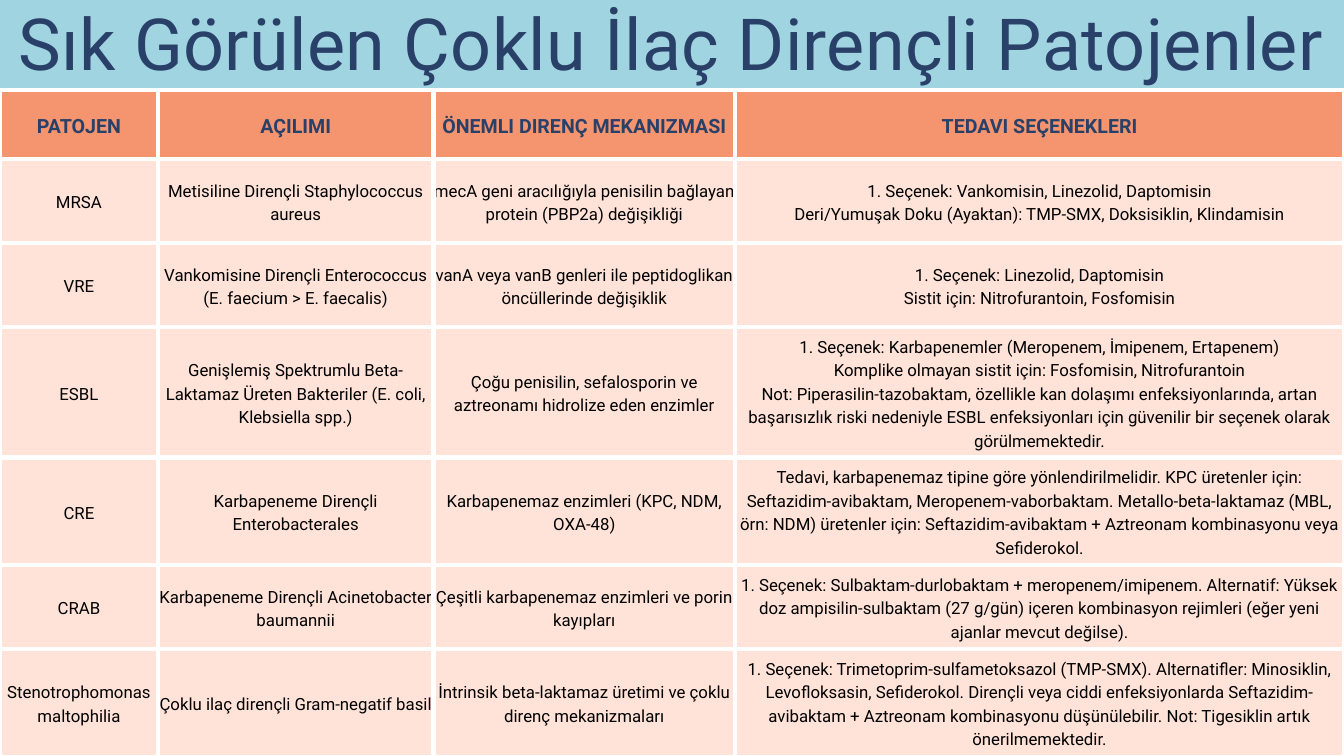
from typing import NamedTuple

from lxml.etree import SubElement
from pptx import Presentation
from pptx.dml.color import RGBColor
from pptx.enum.shapes import MSO_SHAPE
from pptx.enum.text import MSO_ANCHOR, MSO_AUTO_SIZE, PP_ALIGN
from pptx.oxml.ns import qn
from pptx.util import Inches, Pt

COLORS = {
    "page": "E7F1F4",
    "band": "A1D4E1",
    "navy": "294069",
    "header": "F4956F",
    "body": "FFE3D8",
    "black": "000000",
    "border": "FFFFFF",
}
FONT = "Roboto"
BORDER_WIDTH = Pt(5.25)
COLUMN_WIDTHS = [2.35, 4.1, 4.49, 9.06]
ROW_HEIGHTS = [1.03, 1.25, 1.25, 1.94, 1.6, 1.25, 1.6]


class TextStyle(NamedTuple):
    size: float
    spacing: float
    color: str
    bold: bool = False


class Pathogen(NamedTuple):
    name: str
    meaning: str
    mechanism: str
    treatment: str


TITLE_STYLE = TextStyle(77, 84.7, "navy")
HEADER_STYLE = TextStyle(21, 29.4, "navy", True)
BODY_STYLE = TextStyle(18, 25.2, "black")

HEADER = Pathogen("PATOJEN", "AÇILIMI", "ÖNEMLI DIRENÇ MEKANIZMASI", "TEDAVI SEÇENEKLERI")
PATHOGENS = [
    Pathogen(
        "MRSA",
        "Metisiline Dirençli Staphylococcus aureus",
        "mecA geni aracılığıyla penisilin bağlayan protein (PBP2a) değişikliği",
        "1. Seçenek: Vankomisin, Linezolid, Daptomisin\n"
        "Deri/Yumuşak Doku (Ayaktan): TMP-SMX, Doksisiklin, Klindamisin",
    ),
    Pathogen(
        "VRE",
        "Vankomisine Dirençli Enterococcus (E. faecium > E. faecalis)",
        "vanA veya vanB genleri ile peptidoglikan öncüllerinde değişiklik",
        "1. Seçenek: Linezolid, Daptomisin\n"
        "Sistit için: Nitrofurantoin, Fosfomisin",
    ),
    Pathogen(
        "ESBL",
        "Genişlemiş Spektrumlu Beta-Laktamaz Üreten Bakteriler (E. coli, Klebsiella spp.)",
        "Çoğu penisilin, sefalosporin ve aztreonamı hidrolize eden enzimler",
        "1. Seçenek: Karbapenemler (Meropenem, İmipenem, Ertapenem)\n"
        "Komplike olmayan sistit için: Fosfomisin, Nitrofurantoin\n"
        "Not: Piperasilin-tazobaktam, özellikle kan dolaşımı enfeksiyonlarında, artan "
        "başarısızlık riski nedeniyle ESBL enfeksiyonları için güvenilir bir seçenek "
        "olarak görülmemektedir.",
    ),
    Pathogen(
        "CRE",
        "Karbapeneme Dirençli Enterobacterales",
        "Karbapenemaz enzimleri (KPC, NDM, OXA-48)",
        "Tedavi, karbapenemaz tipine göre yönlendirilmelidir. KPC üretenler için: "
        "Seftazidim-avibaktam, Meropenem-vaborbaktam. Metallo-beta-laktamaz (MBL, örn: "
        "NDM) üretenler için: Seftazidim-avibaktam + Aztreonam kombinasyonu veya "
        "Sefiderokol.",
    ),
    Pathogen(
        "CRAB",
        "Karbapeneme Dirençli Acinetobacter baumannii",
        "Çeşitli karbapenemaz enzimleri ve porin kayıpları",
        "1. Seçenek: Sulbaktam-durlobaktam + meropenem/imipenem. Alternatif: Yüksek doz "
        "ampisilin-sulbaktam (27 g/gün) içeren kombinasyon rejimleri (eğer yeni ajanlar "
        "mevcut değilse).",
    ),
    Pathogen(
        "Stenotrophomonas maltophilia",
        "Çoklu ilaç dirençli Gram-negatif basil",
        "İntrinsik beta-laktamaz üretimi ve çoklu direnç mekanizmaları",
        "1. Seçenek: Trimetoprim-sulfametoksazol (TMP-SMX). Alternatifler: Minosiklin, "
        "Levofloksasin, Sefiderokol. Dirençli veya ciddi enfeksiyonlarda "
        "Seftazidim-avibaktam + Aztreonam kombinasyonu düşünülebilir. Not: Tigesiklin "
        "artık önerilmemektedir.",
    ),
]


def rgb(name: str) -> RGBColor:
    return RGBColor.from_string(COLORS[name])


def write_text(frame, text: str, style: TextStyle) -> None:
    """Fill a text frame with centred paragraphs, one per line of text."""
    frame.text = text
    frame.word_wrap = True
    for paragraph in frame.paragraphs:
        paragraph.alignment = PP_ALIGN.CENTER
        paragraph.line_spacing = Pt(style.spacing)
        paragraph.space_before = Pt(0)
        font = paragraph.font
        font.name = FONT
        font.size = Pt(style.size)
        font.bold = style.bold
        font.color.rgb = rgb(style.color)


def clear_margins(holder) -> None:
    holder.margin_left = holder.margin_right = 0
    holder.margin_top = holder.margin_bottom = 0


def add_borders(cell) -> None:
    properties = cell._tc.get_or_add_tcPr()
    for index, side in enumerate(("lnL", "lnR", "lnT", "lnB")):
        line = SubElement(properties, qn(f"a:{side}"), w=str(BORDER_WIDTH))
        fill = SubElement(line, qn("a:solidFill"))
        SubElement(fill, qn("a:srgbClr"), val=COLORS["border"])
        # Border lines must come before the cell fill
        properties.insert(index, line)


def fill_cell(cell, text: str, style: TextStyle, fill: str) -> None:
    write_text(cell.text_frame, text, style)
    clear_margins(cell)
    cell.vertical_anchor = MSO_ANCHOR.MIDDLE
    cell.fill.solid()
    cell.fill.fore_color.rgb = rgb(fill)
    add_borders(cell)


def add_band(page):
    band = page.shapes.add_shape(MSO_SHAPE.RECTANGLE, 0, 0, Inches(20), Inches(1.95))
    band.shadow.inherit = False
    band.fill.solid()
    band.fill.fore_color.rgb = rgb("band")
    band.line.fill.background()


def add_pathogen_table(page):
    rows = [HEADER, *PATHOGENS]
    frame = page.shapes.add_table(
        len(rows), len(COLUMN_WIDTHS),
        0, Inches(1.34), Inches(sum(COLUMN_WIDTHS)), Inches(sum(ROW_HEIGHTS)),
    )
    table = frame.table
    table.first_row = table.horz_banding = False
    for column, width in zip(table.columns, COLUMN_WIDTHS):
        column.width = Inches(width)
    for row, height, pathogen in zip(table.rows, ROW_HEIGHTS, rows):
        row.height = Inches(height)
        is_header = pathogen is HEADER
        style = HEADER_STYLE if is_header else BODY_STYLE
        for cell, text in zip(row.cells, pathogen):
            fill_cell(cell, text, style, "header" if is_header else "body")
    return frame


def place_title(page) -> None:
    title = page.shapes.title
    title.left, title.top = 0, Inches(0.08)
    title.width, title.height = Inches(20), Inches(1.19)
    frame = title.text_frame
    write_text(frame, "Sık Görülen Çoklu İlaç Dirençli Patojenler", TITLE_STYLE)
    clear_margins(frame)
    frame.vertical_anchor = MSO_ANCHOR.TOP
    frame.auto_size = MSO_AUTO_SIZE.NONE
    span = frame.paragraphs[0].runs[0]
    span._r.get_or_add_rPr().set("spc", "40")


def main() -> None:
    deck = Presentation()
    deck.slide_width, deck.slide_height = Inches(20), Inches(11.25)
    page = deck.slides.add_slide(deck.slide_layouts[5])
    page.background.fill.solid()
    page.background.fill.fore_color.rgb = rgb("page")

    # Band at the back, then the table, with the title in front
    add_band(page)
    table_frame = add_pathogen_table(page)
    place_title(page)
    table_frame._element.addnext(page.shapes.title._element)

    deck.save("out.pptx")


if __name__ == "__main__":
    main()
